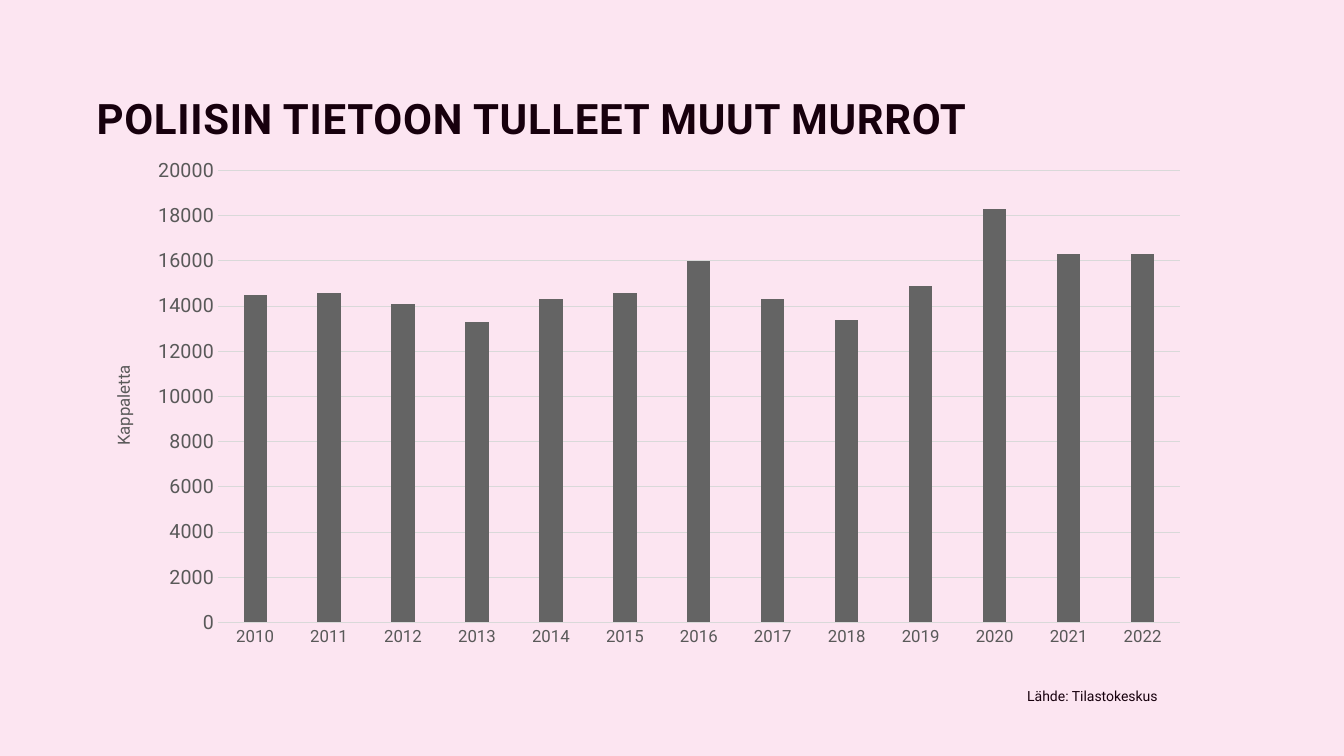
import pptx
import pptx.util
from dataclasses import dataclass
from pptx.chart.data import CategoryChartData
from pptx.dml.color import RGBColor
from pptx.enum.chart import XL_CHART_TYPE, XL_TICK_MARK
from pptx.enum.shapes import MSO_SHAPE
from pptx.enum.text import MSO_ANCHOR
from pptx.oxml import parse_xml
from pptx.oxml.ns import nsdecls, qn
from pptx.util import Inches


@dataclass(frozen=True)
class Theme:
    font: str = "Roboto"
    background: str = "FCE5F1"
    ink: str = "17000D"
    axis: str = "595959"
    grid: str = "D9D9D9"
    bar: str = "646464"
    title_size: int = 30
    value_size: int = 14
    label_size: int = 12
    source_size: int = 10


THEME = Theme()
YEARS = [str(year) for year in range(2010, 2023)]
BREAK_INS = [14500, 14600, 14100, 13300, 14300, 14600, 16000,
             14300, 13400, 14900, 18300, 16300, 16300]


def style_font(font, size, color, bold=False):
    font.name = THEME.font
    font.size = pptx.util.Pt(size)
    font.bold = bold
    font.color.rgb = RGBColor.from_string(color)


def style_line(line):
    line.color.rgb = RGBColor.from_string(THEME.grid)
    line.width = pptx.util.Pt(0.75)


def add_background(s, prs):
    sp = s.shapes.add_shape(MSO_SHAPE.RECTANGLE, 0, 0, prs.slide_width, prs.slide_height)
    sp.shadow.inherit = False
    sp.fill.solid()
    sp.fill.fore_color.rgb = RGBColor.from_string(THEME.background)
    sp.line.fill.background()


def add_text(s, box, text, size, bold=False, wrap=True):
    tf = s.shapes.add_textbox(*map(Inches, box)).text_frame
    tf.word_wrap = wrap
    p = tf.paragraphs[0]
    r = p.add_run()
    r.text = text
    style_font(p.font, size, THEME.ink, bold)
    return tf


def add_title(s, text):
    tf = add_text(s, (0.86, 0.02, 11.16, 1.45), text, THEME.title_size, bold=True)
    tf.vertical_anchor = MSO_ANCHOR.BOTTOM
    p = tf.paragraphs[0]
    p.line_spacing = pptx.util.Pt(43.2)
    p.runs[0].font._element.set("spc", "50")


def set_layout(parent, before, target="", **fractions):
    """Place a chart part by fractions of the chart's size."""
    for old in parent.findall(qn("c:layout")):
        parent.remove(old)
    inner = f'<c:layoutTarget val="{target}"/>' if target else ""
    inner += "".join(f'<c:{k}Mode val="edge"/>' for k in "xy")
    inner += "".join(f'<c:{k} val="{v}"/>' for k, v in fractions.items())
    layout = parse_xml(f'<c:layout {nsdecls("c")}><c:manualLayout>{inner}'
                       "</c:manualLayout></c:layout>")
    parent.find(qn(before)).addprevious(layout)


def add_column_chart(s, box):
    data = CategoryChartData()
    data.categories = YEARS
    data.add_series("Murrot", BREAK_INS)
    chart = s.shapes.add_chart(XL_CHART_TYPE.COLUMN_CLUSTERED,
                               *map(Inches, box), data).chart
    chart.has_legend = False
    chart.has_title = False
    style_font(chart.font, THEME.label_size, THEME.axis)

    # Columns
    plot = chart.plots[0]
    plot.gap_width = 219
    plot.overlap = -27
    plot.vary_by_categories = False
    fill = plot.series[0].format.fill
    fill.solid()
    fill.fore_color.rgb = RGBColor.from_string(THEME.bar)

    # Axes
    years, counts = chart.category_axis, chart.value_axis
    for axis, size in ((years, THEME.label_size), (counts, THEME.value_size)):
        axis.major_tick_mark = axis.minor_tick_mark = XL_TICK_MARK.NONE
        style_font(axis.tick_labels.font, size, THEME.axis)
    style_line(years.format.line)
    counts.format.line.fill.background()
    style_line(counts.major_gridlines.format.line)
    counts.minimum_scale, counts.maximum_scale, counts.major_unit = 0, 20000, 2000

    # Rotated axis title
    title = counts.axis_title
    tf = title.text_frame
    tf.text = "Kappaletta"
    style_font(tf.paragraphs[0].font, THEME.label_size, THEME.axis)
    body = tf._txBody.find(qn("a:bodyPr"))
    body.set("rot", "-5400000")
    body.set("vert", "horz")

    set_layout(title._element, "c:overlay", x=0.02, y=0.42)
    set_layout(chart._chartSpace.chart.plotArea, "c:barChart", "inner",
               x=0.118, y=0.044, w=0.863, h=0.888)


def main():
    prs = pptx.Presentation()
    prs.slide_width, prs.slide_height = Inches(13.33), Inches(7.5)
    s = prs.slides.add_slide(prs.slide_layouts[6])
    add_background(s, prs)
    add_title(s, "POLIISIN TIETOON TULLEET MUUT MURROT")
    add_column_chart(s, (0.86, 1.47, 11.05, 5.05))
    add_text(s, (10.09, 6.77, 1.6, 0.27), "Lähde: Tilastokeskus",
             THEME.source_size, wrap=False)
    prs.save("out.pptx")


if __name__ == "__main__":
    main()
